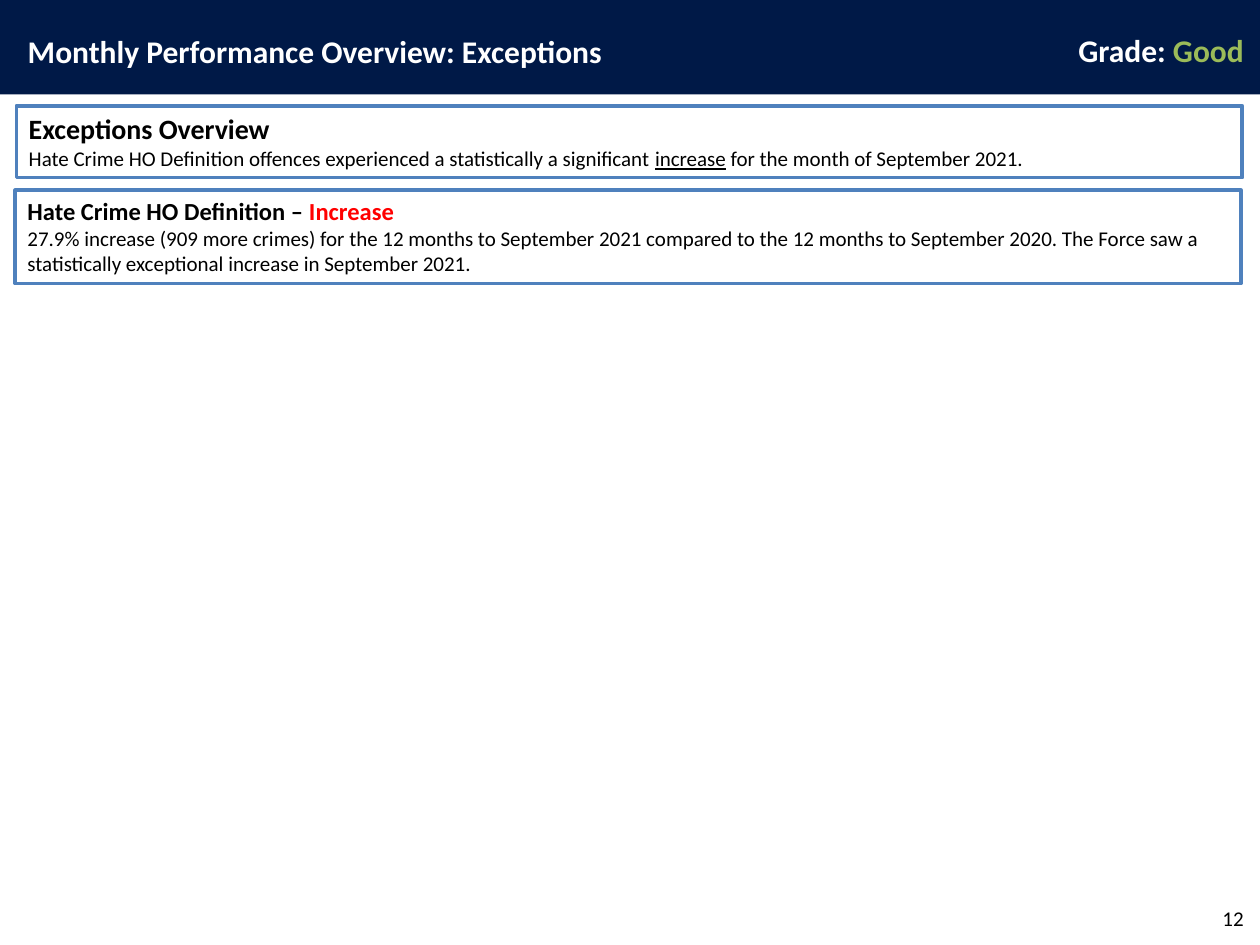
from pptx import Presentation
from pptx.dml.color import RGBColor
from pptx.enum.shapes import MSO_SHAPE
from pptx.enum.text import MSO_ANCHOR, MSO_AUTO_SIZE, PP_ALIGN
from pptx.util import Inches, Pt

NAVY = RGBColor(0x00, 0x19, 0x47)
BLUE = RGBColor(0x4F, 0x81, 0xBD)
GREEN = RGBColor(0x9B, 0xBB, 0x59)
RED = RGBColor(0xFF, 0x00, 0x00)
WHITE = RGBColor(0xFF, 0xFF, 0xFF)
BLACK = RGBColor(0x00, 0x00, 0x00)

# Content: each text is a list of paragraphs, each a list of (words, format)
HEAD = {"size": Pt(18), "bold": True, "color": WHITE}
BODY = {"size": Pt(12), "bold": False, "color": BLACK}
LEAD = {"size": Pt(16), "bold": True, "color": BLACK}
TOPIC = LEAD | {"size": Pt(14)}

TITLE = [[("Monthly Performance Overview: Exceptions", HEAD)]]
GRADE = [[("Grade: ", HEAD), ("Good", HEAD | {"color": GREEN})]]
NUMBER = [[("12", BODY)]]
PANELS = [
    (0.13, 0.57, [
        [("Exceptions Overview", LEAD)],
        [("Hate Crime HO Definition offences experienced a statistically "
          "a significant ", BODY),
         ("increase", BODY | {"underline": True}),
         (" for the month of September 2021.", BODY)],
    ]),
    (0.12, 0.74, [
        [("Hate Crime HO Definition – ", TOPIC),
         ("Increase", TOPIC | {"color": RED})],
        [("27.9% increase (909 more crimes) for the 12 months to September "
          "2021 compared to the 12 months to September 2020. The Force saw a "
          "statistically exceptional increase in September 2021.", BODY)],
    ]),
]

# Layout in inches
WIDE, HIGH = 10, 7.5
BAND = HIGH / 10
ROW, TOP = 0.4, 0.2
PANEL_TOP, PANEL_WIDE, GAP = 0.84, 9.73, 0.1


def place(shape, *box):
    names = ("left", "top", "width", "height")
    for name, value in zip(names, box):
        setattr(shape, name, Inches(value))


def write(shape, text, align=PP_ALIGN.LEFT, anchor=MSO_ANCHOR.TOP):
    frame = shape.text_frame
    frame.word_wrap = True
    frame.auto_size = MSO_AUTO_SIZE.NONE
    frame.vertical_anchor = anchor
    for i, runs in enumerate(text):
        para = frame.add_paragraph() if i else frame.paragraphs[0]
        para.alignment = align
        for words, style in runs:
            run = para.add_run()
            run.text = words
            run.font.name = "Calibri"
            for key, value in style.items():
                if key == "color":
                    run.font.color.rgb = value
                else:
                    setattr(run.font, key, value)


def block(shapes, box, fill, line=None):
    shape = shapes.add_shape(MSO_SHAPE.RECTANGLE, *map(Inches, box))
    shape.shadow.inherit = False
    shape.fill.solid()
    shape.fill.fore_color.rgb = fill
    if line is None:
        shape.line.fill.background()
    else:
        shape.line.color.rgb = line
        shape.line.width = Pt(2)
    return shape


def main():
    deck = Presentation()
    deck.slide_width, deck.slide_height = Inches(WIDE), Inches(HIGH)
    slide = deck.slides.add_slide(deck.slide_layouts[5])
    shapes = slide.shapes

    # Header band, behind the title
    title = shapes.title
    band = block(shapes, (0, 0, WIDE, BAND), NAVY)
    title.element.addprevious(band.element)
    place(title, 0.12, TOP, 5.67, ROW)
    write(title, TITLE)

    # Page number and grade
    number = shapes.add_textbox(*map(Inches, (7.64, 7.09, 2.33, ROW)))
    write(number, NUMBER, PP_ALIGN.RIGHT, MSO_ANCHOR.MIDDLE)
    grade = shapes.add_textbox(*map(Inches, (8.46, TOP, 1.54, ROW)))
    write(grade, GRADE)

    # Stacked panels
    top = PANEL_TOP
    for left, high, text in PANELS:
        write(block(shapes, (left, top, PANEL_WIDE, high), WHITE, BLUE), text)
        top += high + GAP

    deck.save("out.pptx")


if __name__ == "__main__":
    main()
